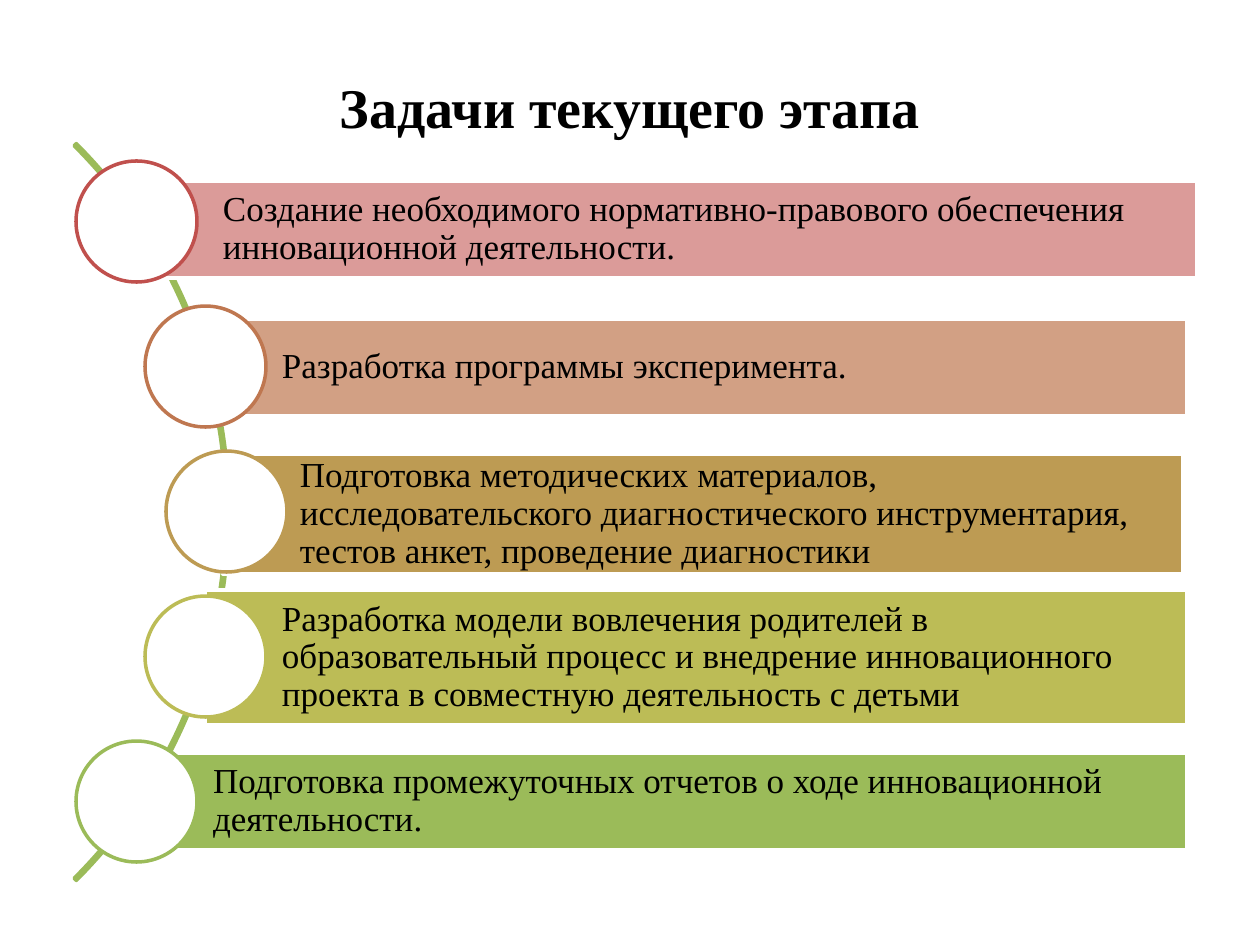
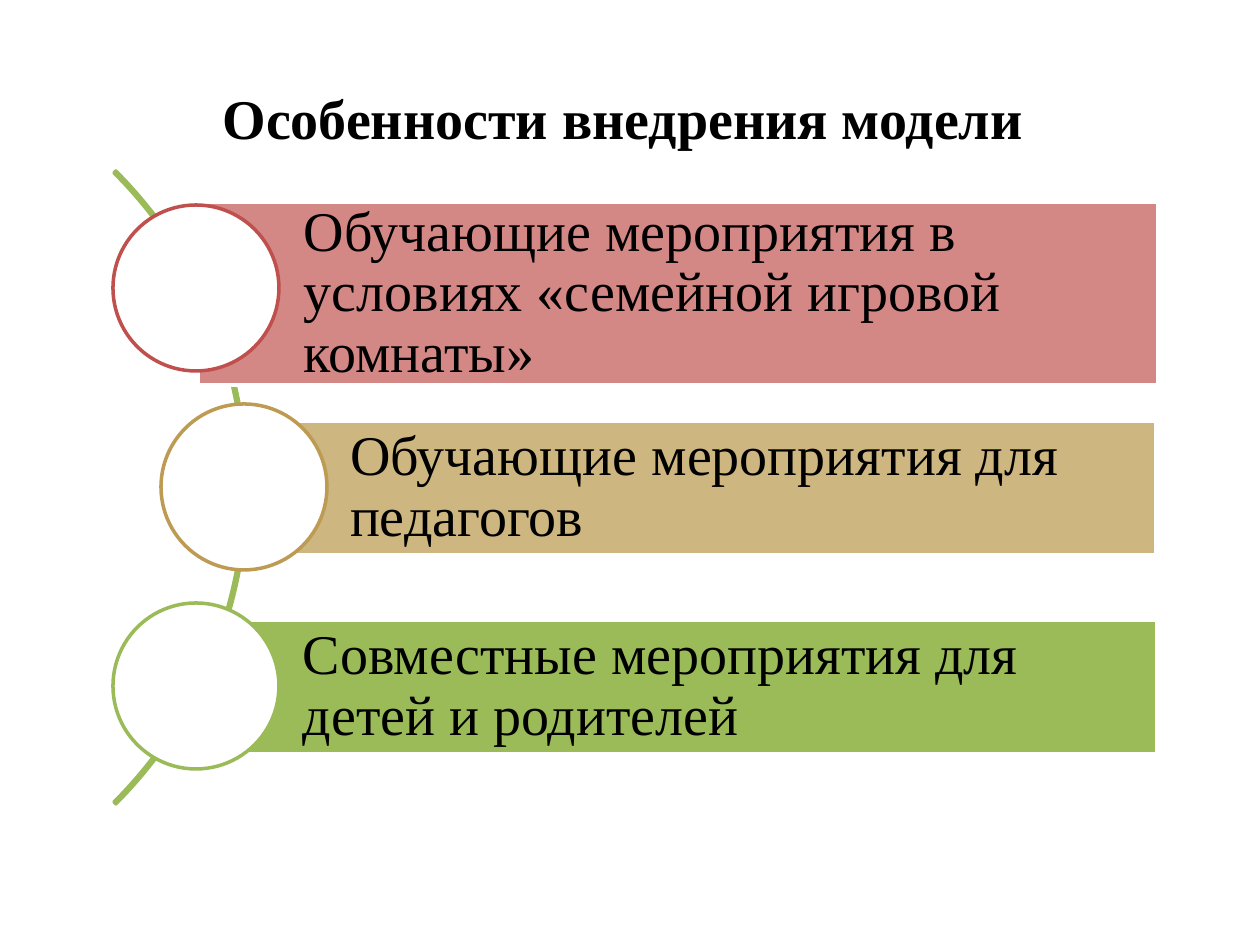
from pptx import Presentation
from pptx.dml.color import RGBColor
from pptx.enum.shapes import MSO_SHAPE
from pptx.enum.text import MSO_ANCHOR, PP_ALIGN
from pptx.util import Emu, Pt

ARC, BAR, CIRCLE = MSO_SHAPE.BLOCK_ARC, MSO_SHAPE.RECTANGLE, MSO_SHAPE.OVAL
MIDDLE = MSO_ANCHOR.MIDDLE
LEFT, CENTER = PP_ALIGN.LEFT, PP_ALIGN.CENTER

PX_PER_INCH = 126
TITLE_ONLY = 5
FONT = "Times New Roman"
TITLE_SIZE = 32
LINE_WIDTH = Pt(2)

BLACK = RGBColor(0x00, 0x00, 0x00)
WHITE = RGBColor(0xFF, 0xFF, 0xFF)
RED = RGBColor(0xC0, 0x50, 0x4D)
ROSE = RGBColor(0xDB, 0x9B, 0x99)
DEEP_ROSE = RGBColor(0xD4, 0x88, 0x86)
RUST = RGBColor(0xBF, 0x77, 0x50)
TAN = RGBColor(0xD2, 0xA0, 0x84)
OCHRE = RGBColor(0xBD, 0x9B, 0x53)
SAND = RGBColor(0xCE, 0xB6, 0x80)
OLIVE = RGBColor(0xBC, 0xBC, 0x56)
GREEN = RGBColor(0x9B, 0xBB, 0x59)

# Each step: text, bar box, bar colour, circle left, circle colour
TASKS = [
    ("Создание необходимого нормативно-правового обеспечения инновационной деятельности.",
     (146, 181, 1051, 97), ROSE, 76, RED),
    ("Разработка программы эксперимента.",
     (205, 319, 982, 97), TAN, 145, RUST),
    ("Подготовка методических материалов, исследовательского диагностического "
     "инструментария, тестов анкет, проведение диагностики",
     (223, 454, 960, 120), OCHRE, 166, OCHRE),
    ("Разработка модели вовлечения родителей в образовательный процесс и внедрение "
     "инновационного проекта в совместную деятельность с детьми",
     (205, 590, 982, 135), OLIVE, 145, OLIVE),
    ("Подготовка промежуточных отчетов о ходе инновационной деятельности.",
     (136, 753, 1051, 97), GREEN, 76, GREEN),
]
FEATURES = [
    ("Обучающие мероприятия в условиях «семейной игровой комнаты»",
     (198, 202, 960, 183), DEEP_ROSE, 113, RED),
    ("Обучающие мероприятия для педагогов",
     (244, 421, 912, 134), SAND, 161, OCHRE),
    ("Совместные мероприятия для детей и родителей",
     (197, 620, 960, 134), GREEN, 113, GREEN),
]


def px(length):
    return Emu(round(length * 914400 / PX_PER_INCH))


def write(frame, text, size, align, bold=False):
    frame.text = text
    frame.word_wrap = True
    frame.vertical_anchor = MIDDLE
    para = frame.paragraphs[0]
    para.alignment = align
    for span in para.runs:
        span.font.name = FONT
        span.font.size = Pt(size)
        span.font.bold = bold
        span.font.color.rgb = BLACK
    return para


def add_titled_page(deck, title, height):
    page = deck.slides.add_slide(deck.slide_layouts[TITLE_ONLY])
    box = page.shapes.title
    box.left, box.top, box.width, box.height = map(px, (63, 38, 1134, height))
    write(box.text_frame, title, TITLE_SIZE, CENTER, bold=True)
    return page


def add_outlined(page, kind, box, line, fill=None):
    shape = page.shapes.add_shape(kind, *map(px, box))
    shape.shadow.inherit = False
    if fill is None:
        shape.fill.background()
    else:
        shape.fill.solid()
        shape.fill.fore_color.rgb = fill
    shape.line.color.rgb = line
    shape.line.width = LINE_WIDTH
    return shape


def add_arc(page, left, top, size):
    """Draw the thin right-hand quarter of a ring."""
    arc = add_outlined(page, ARC, (left, top, size, size), GREEN)
    for index, value in enumerate((189, 27, 0.003)):
        arc.adjustments[index] = value


def add_bar(page, text, box, fill, size, indent, margin):
    bar = add_outlined(page, BAR, box, WHITE, fill)
    frame = bar.text_frame
    frame.margin_left = px(indent)
    frame.margin_top = frame.margin_right = frame.margin_bottom = px(margin)
    para = write(frame, text, size, LEFT)
    para.line_spacing = 0.9


def add_steps(page, steps, first_top, pitch, diameter, size, indent, margin):
    """Add bars, each with a circle; circle tops are one pitch apart."""
    for index, (text, box, fill, left, outline) in enumerate(steps):
        add_bar(page, text, box, fill, size, indent, margin)
        top = first_top + index * pitch
        add_outlined(page, CIRCLE, (left, top, diameter, diameter), outline, WHITE)


def main():
    deck = Presentation()
    deck.slide_width, deck.slide_height = px(1260), px(945)

    page = add_titled_page(deck, "Задачи текущего этапа", 137)
    add_arc(page, -813, -9, 1042)
    add_steps(page, TASKS, first_top=161, pitch=145, diameter=121,
              size=20, indent=77, margin=8)

    page = add_titled_page(deck, "Особенности внедрения модели ", 158)
    add_arc(page, -648, 40, 895)
    add_steps(page, FEATURES, first_top=205, pitch=199, diameter=166,
              size=32, indent=106, margin=11)

    deck.save("out.pptx")


if __name__ == "__main__":
    main()
